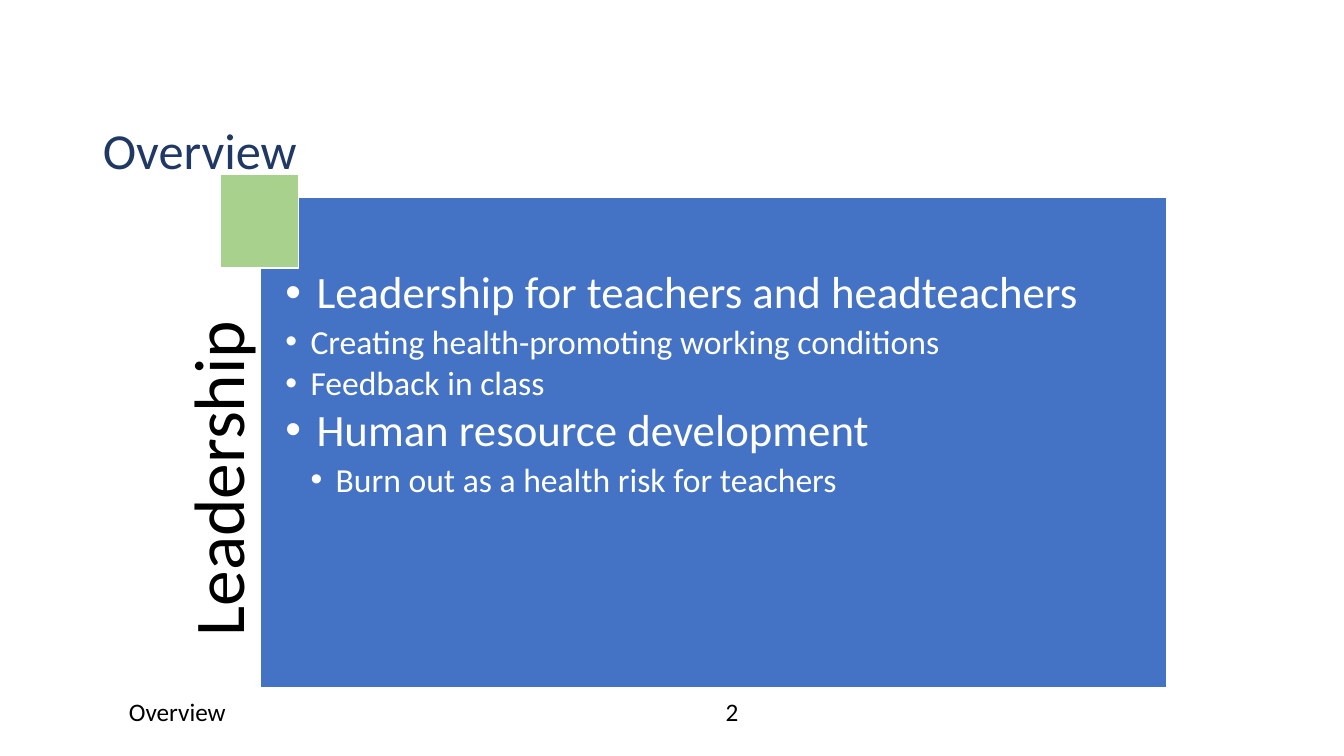
from lxml import etree
from pptx import Presentation
from pptx.dml.color import RGBColor
from pptx.enum.shapes import MSO_SHAPE
from pptx.enum.text import MSO_ANCHOR, MSO_AUTO_SIZE, PP_ALIGN
from pptx.oxml.ns import qn
from pptx.util import Inches, Pt

NAVY = RGBColor(0x20, 0x38, 0x64)
BLUE = RGBColor(0x44, 0x72, 0xC4)
GREEN = RGBColor(0xA9, 0xD1, 0x8E)
WHITE = RGBColor(0xFF, 0xFF, 0xFF)
BLACK = RGBColor(0x00, 0x00, 0x00)


def write_text(shape, text, size, color=BLACK, align=PP_ALIGN.LEFT, anchor=MSO_ANCHOR.TOP,
               line_spacing=1.0, space_after=0, margins=(0.1, 0.05, 0.1, 0.05),
               level=0, indent=None, new_paragraph=False):
    """Write one paragraph; an indent (left, hanging) in inches makes it a bullet."""
    frame = shape.text_frame
    frame.word_wrap = True
    frame.auto_size = MSO_AUTO_SIZE.NONE
    frame.vertical_anchor = anchor
    (frame.margin_left, frame.margin_top,
     frame.margin_right, frame.margin_bottom) = [Inches(margin) for margin in margins]
    paragraph = frame.add_paragraph() if new_paragraph else frame.paragraphs[0]
    paragraph.level = level
    paragraph.alignment = align
    paragraph.line_spacing = line_spacing
    paragraph.space_before = Pt(0)
    paragraph.space_after = Pt(space_after)
    if indent:
        left, hanging = indent
        properties = paragraph._p.get_or_add_pPr()
        properties.set("marL", str(Inches(left)))
        properties.set("indent", str(-Inches(hanging)))
        etree.SubElement(properties, qn("a:buFont"), typeface="Arial")
        etree.SubElement(properties, qn("a:buChar"), char="•")
    run = paragraph.add_run()
    run.text = text
    run.font.name = "Calibri"
    run.font.size = Pt(size)
    run.font.color.rgb = color


def add_block(left, top, width, height, color):
    block = slide.shapes.add_shape(MSO_SHAPE.RECTANGLE, Inches(left), Inches(top),
                                   Inches(width), Inches(height))
    block.shadow.inherit = False
    block.fill.solid()
    block.fill.fore_color.rgb = color
    block.line.color.rgb = WHITE
    block.line.width = Pt(1)
    return block


presentation = Presentation()
presentation.slide_width = Inches(13.33)
presentation.slide_height = Inches(7.5)
slide = presentation.slides.add_slide(presentation.slide_layouts[1])

# Title
title = slide.shapes.title
title.left, title.top, title.width, title.height = (
    Inches(0.92), Inches(1.2), Inches(11.5), Inches(0.97))
write_text(title, "Overview", size=36, color=NAVY, line_spacing=0.9)

# Vertical section label
label = slide.shapes.add_textbox(Inches(0.24), Inches(3.98), Inches(3.86), Inches(0.82))
label.rotation = 270
write_text(label, "Leadership", size=51, align=PP_ALIGN.RIGHT, anchor=MSO_ANCHOR.BOTTOM,
           line_spacing=0.9, margins=(0, 0, 0.72, 0))

# Blue panel, placed behind the topic list
panel = add_block(2.58, 1.96, 8.99, 4.86, BLUE)
topics = slide.placeholders[1]
topics._element.addprevious(panel._element)
topics.left, topics.top, topics.width, topics.height = (
    panel.left, panel.top, panel.width, panel.height)

# Topic list: text, size, level, indent
topic_rows = [
    ("Leadership for teachers and headteachers", 32, 1, (0.31, 0.31)),
    ("Creating health-promoting working conditions", 24, 1, (0.25, 0.25)),
    ("Feedback in class", 24, 1, (0.25, 0.25)),
    ("Human resource development", 32, 1, (0.31, 0.31)),
    ("Burn out as a health risk for teachers", 24, 2, (0.5, 0.25)),
]
for index, (text, size, level, indent) in enumerate(topic_rows):
    write_text(topics, text, size=size, color=WHITE, line_spacing=0.9,
               space_after=0.15 * size, margins=(0.25, 0.72, 0.25, 0.25),
               level=level, indent=indent, new_paragraph=index > 0)

# Green corner square
add_block(2.19, 1.73, 0.77, 0.93, GREEN)

# Footer and page number
for text, left, width, align in [("Overview", 1.18, 4.5, PP_ALIGN.LEFT),
                                 ("2", 5.76, 3, PP_ALIGN.CENTER)]:
    footer = slide.shapes.add_textbox(Inches(left), Inches(6.86), Inches(width), Inches(0.4))
    write_text(footer, text, size=18, align=align)

presentation.save("out.pptx")
